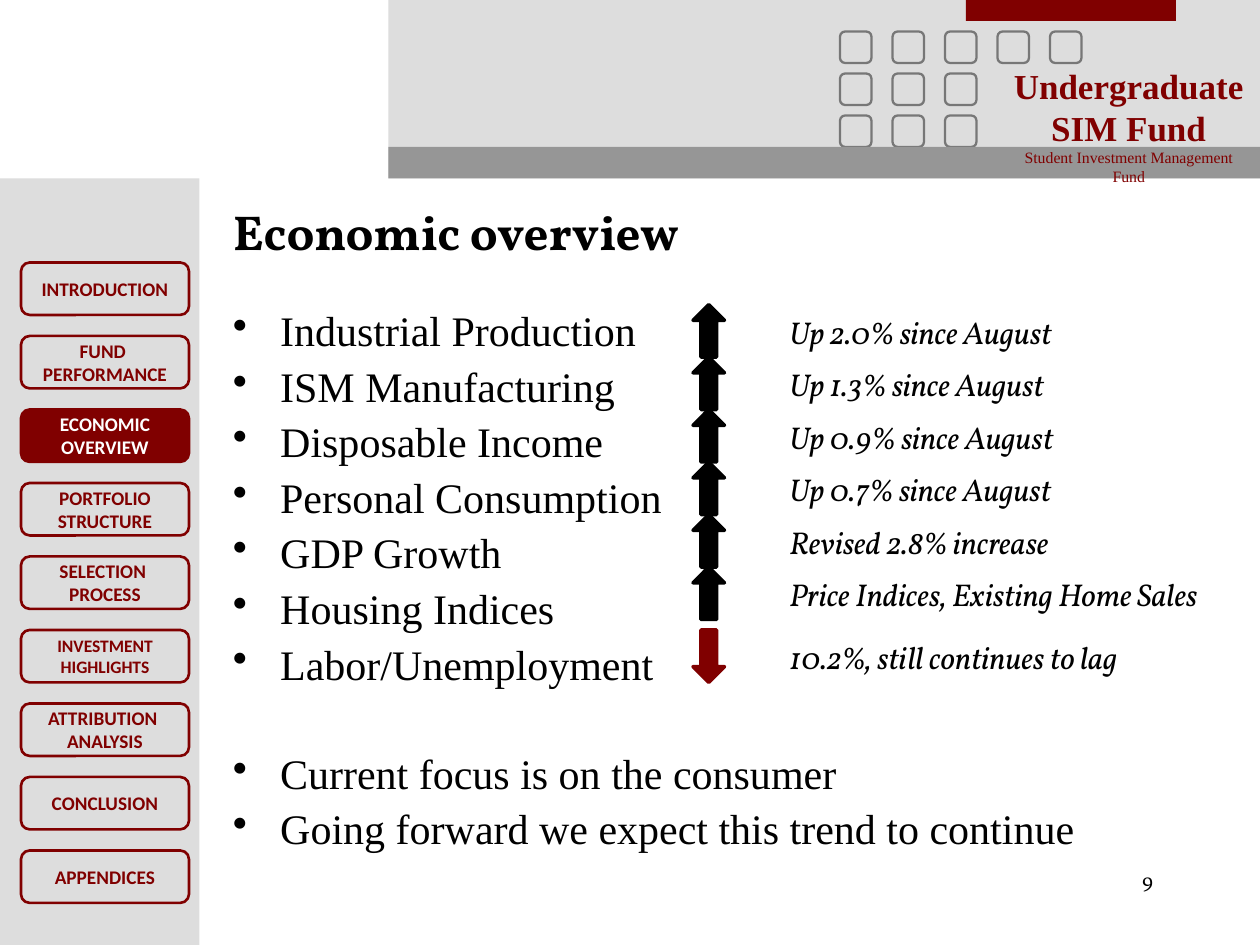
"""Build the economic overview slide of the student fund presentation."""
from lxml.etree import SubElement
from pptx import Presentation
from pptx.dml.color import RGBColor
from pptx.enum.shapes import MSO_SHAPE
from pptx.enum.text import MSO_ANCHOR, PP_ALIGN
from pptx.oxml.ns import qn
from pptx.util import Pt

PX = 7620
COLORS = {
    "panel": "DDDDDD",
    "band": "969696",
    "square": "777777",
    "maroon": "800000",
    "black": "000000",
    "white": "FFFFFF",
}
SERIF, DISPLAY, SANS = "Times New Roman", "Vollkorn", "Calibri"


def add_box(kind, left, top, width, height, fill=None, line=None, weight=1.5):
    box = slide.shapes.add_shape(kind, left * PX, top * PX, width * PX, height * PX)
    box.shadow.inherit = False
    if fill:
        box.fill.solid()
        box.fill.fore_color.rgb = RGBColor.from_string(COLORS[fill])
    else:
        box.fill.background()
    if line:
        box.line.color.rgb = RGBColor.from_string(COLORS[line])
        box.line.width = Pt(weight)
    else:
        box.line.fill.background()
    return box


def write(frame, text, size, font, color="black", bold=False, italic=False, align=PP_ALIGN.LEFT):
    frame.text = text
    for paragraph in frame.paragraphs:
        paragraph.alignment = align
        for run in paragraph.runs:
            run.font.size = Pt(size)
            run.font.name = font
            run.font.bold = bold
            run.font.italic = italic
            run.font.color.rgb = RGBColor.from_string(COLORS[color])


prs = Presentation()
prs.slide_width, prs.slide_height = 1200 * PX, 900 * PX
slide = prs.slides.add_slide(prs.slide_layouts[5])

add_box(MSO_SHAPE.RECTANGLE, 370, 0, 830, 170, "panel")
add_box(MSO_SHAPE.RECTANGLE, 0, 170, 190, 730, "panel")
for row, count in enumerate([5, 3, 3]):
    for column in range(count):
        add_box(MSO_SHAPE.FLOWCHART_ALTERNATE_PROCESS, 800 + 50 * column, 30 + 40 * row,
                30, 30, line="square", weight=1.3)
add_box(MSO_SHAPE.RECTANGLE, 920, 0, 200, 20, "maroon")
add_box(MSO_SHAPE.RECTANGLE, 370, 140, 830, 30, "band")

fund_name = slide.shapes.add_textbox(960 * PX, 61 * PX, 230 * PX, 98 * PX).text_frame
fund_name.word_wrap = True
fund_name.margin_left = fund_name.margin_right = 0
fund_name.margin_top = fund_name.margin_bottom = 0
write(fund_name, "Undergraduate\nSIM Fund\nStudent Investment Management Fund",
      20, SERIF, "maroon", bold=True, align=PP_ALIGN.CENTER)
full_name = fund_name.paragraphs[2].runs[0].font
full_name.size, full_name.bold = Pt(9), False

sections = [
    "INTRODUCTION",
    "FUND \nPERFORMANCE",
    "ECONOMIC\nOVERVIEW",
    "PORTFOLIO\nSTRUCTURE",
    "SELECTION \nPROCESS",
    "INVESTMENT\nHIGHLIGHTS",
    "ATTRIBUTION \nANALYSIS",
    "CONCLUSION",
    "APPENDICES",
]
for index, section in enumerate(sections):
    current = section.startswith("ECONOMIC")
    button = add_box(MSO_SHAPE.FLOWCHART_ALTERNATE_PROCESS, 20, 250 + 70 * index, 160, 50,
                     "maroon" if current else None, "maroon")
    button.text_frame.word_wrap = False
    button.text_frame.vertical_anchor = MSO_ANCHOR.MIDDLE
    write(button.text_frame, section, 10 if section.startswith("INVESTMENT") else 11, SANS,
          "white" if current else "maroon", bold=True, align=PP_ALIGN.CENTER)

title = slide.shapes.title
title.left, title.top, title.width, title.height = 210 * PX, 170 * PX, 900 * PX, 100 * PX
title.text_frame.vertical_anchor = MSO_ANCHOR.MIDDLE
write(title.text_frame, "Economic overview", 28, DISPLAY, bold=True)

indicators = [
    ("Industrial Production", "Up 2.0% since August"),
    ("ISM Manufacturing", "Up 1.3% since August"),
    ("Disposable Income", "Up 0.9% since August"),
    ("Personal Consumption", "Up 0.7% since August"),
    ("GDP Growth", "Revised 2.8% increase"),
    ("Housing Indices", "Price Indices, Existing Home Sales"),
    ("Labor/Unemployment", "10.2%, still continues to lag"),
]
outlook = ["Current focus is on the consumer", "Going forward we expect this trend to continue"]

overview = slide.shapes.add_textbox(210 * PX, 290 * PX, 940 * PX, 470 * PX).text_frame
overview.word_wrap = True
write(overview, "\n".join([name for name, reading in indicators] + outlook), 24, SERIF)
for index, point in enumerate(overview.paragraphs):
    point.line_spacing = 0.9
    if index:
        point.space_before = Pt(36.5 if point.text == outlook[0] else 5.8)
    properties = point._p.get_or_add_pPr()
    properties.set("marL", str(45 * PX))
    properties.set("indent", str(-45 * PX))
    SubElement(properties, qn("a:buChar")).set("char", "•")

for index, (name, reading) in enumerate(indicators):
    falling = name == "Labor/Unemployment"
    top = 610 if falling else 300 + 50 * index
    color = "maroon" if falling else "black"
    arrow = add_box(MSO_SHAPE.RIGHT_ARROW, 650, top, 50, 30, color, color, 2)
    arrow.rotation = 90 if falling else 270
    detail = slide.shapes.add_textbox(740 * PX, (top - 8) * PX, 460 * PX, 48 * PX).text_frame
    detail.word_wrap = True
    write(detail, reading, 18, DISPLAY, italic=True)

page_number = slide.shapes.add_textbox(860 * PX, 820 * PX, 250 * PX, 60 * PX).text_frame
page_number.word_wrap = True
write(page_number, "9", 12, DISPLAY, align=PP_ALIGN.RIGHT)

prs.save("out.pptx")
